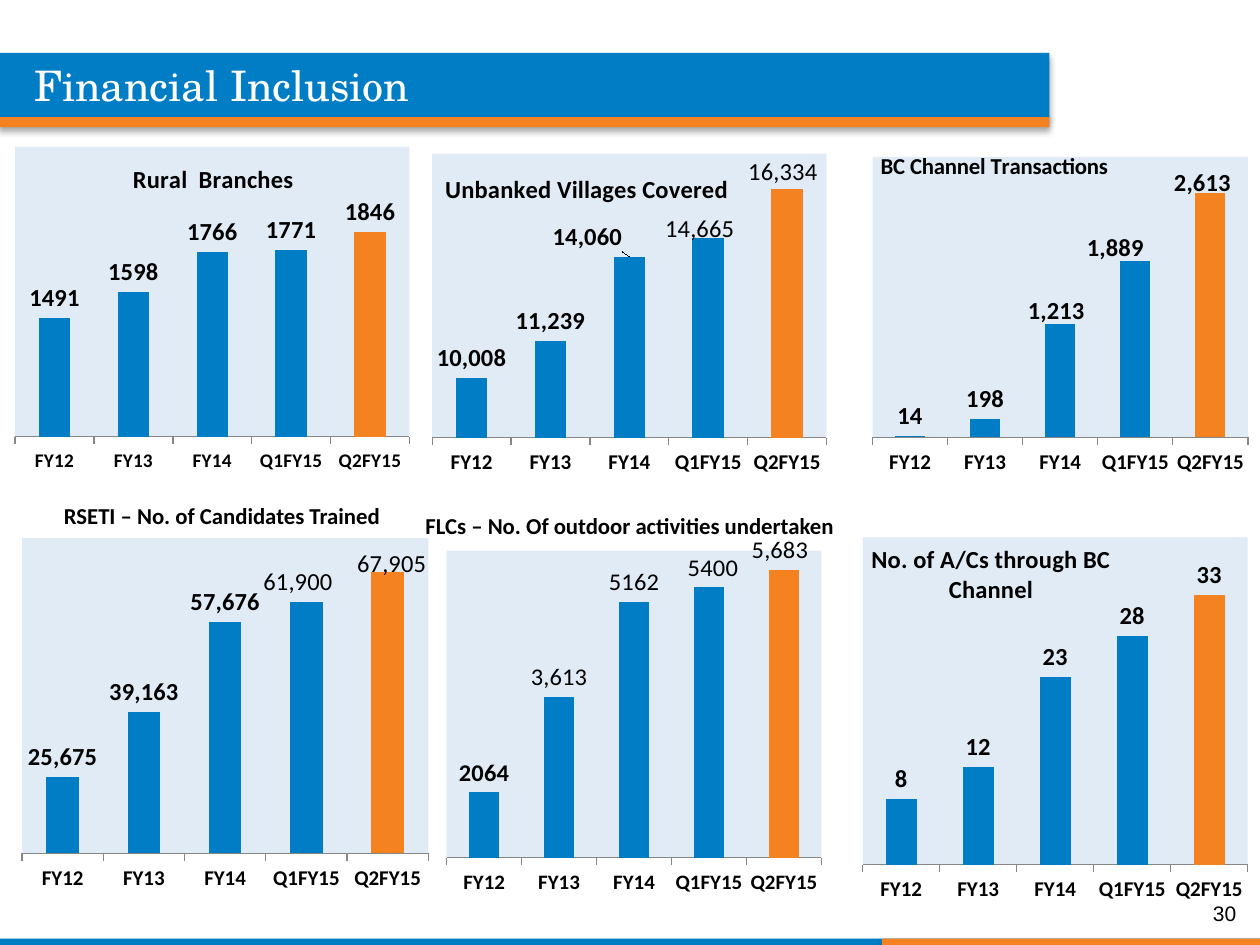
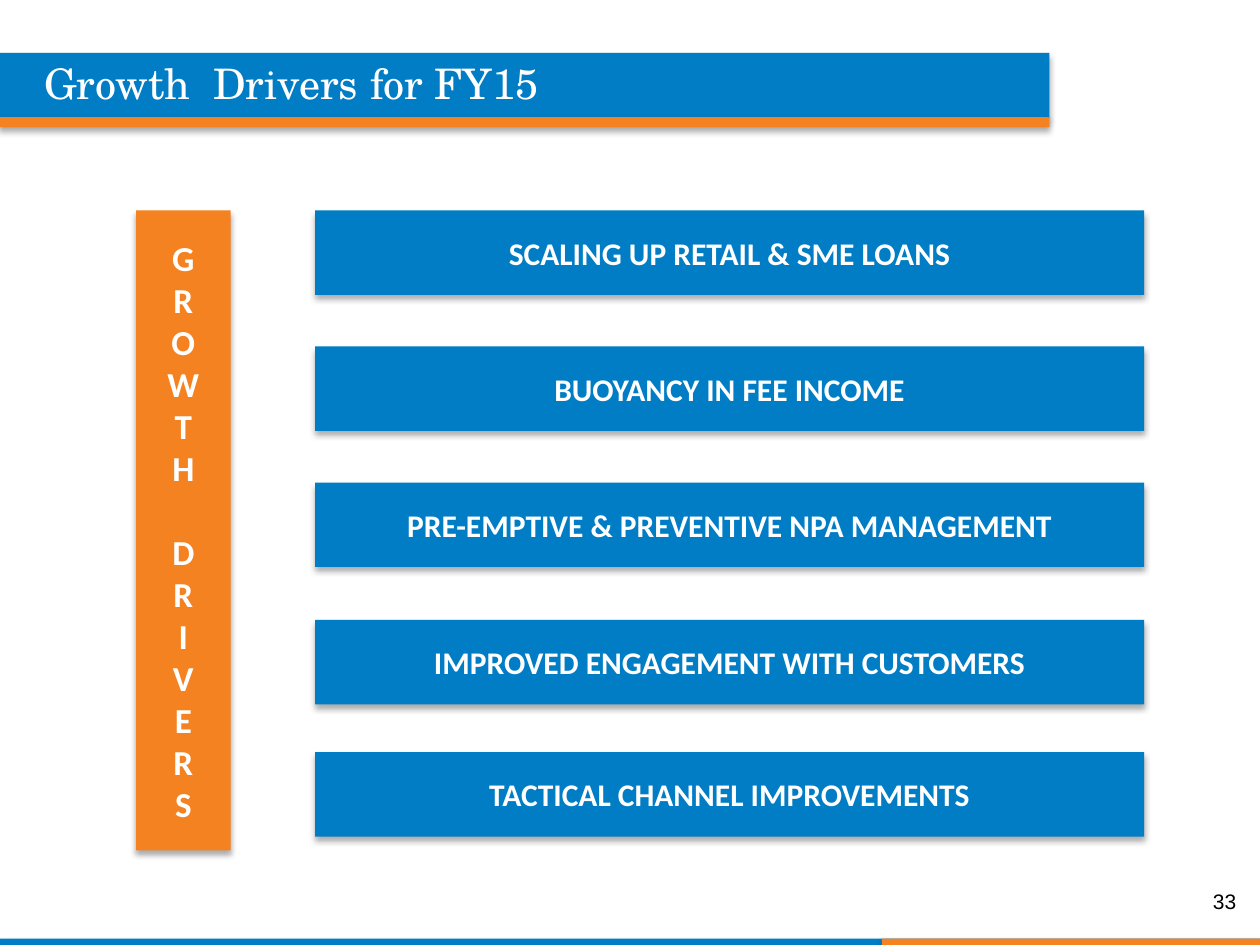
from lxml import etree
from pptx import Presentation
from pptx.chart.data import CategoryChartData
from pptx.dml.color import RGBColor
from pptx.enum.chart import XL_CHART_TYPE, XL_LABEL_POSITION, XL_TICK_MARK
from pptx.enum.shapes import MSO_SHAPE
from pptx.enum.text import MSO_ANCHOR, PP_ALIGN
from pptx.oxml import parse_xml
from pptx.oxml.ns import nsdecls, qn
from pptx.util import Inches, Pt

COLUMN = XL_CHART_TYPE.COLUMN_CLUSTERED
OUTSIDE_END = XL_LABEL_POSITION.OUTSIDE_END
TICK_OUTSIDE, TICK_NONE = XL_TICK_MARK.OUTSIDE, XL_TICK_MARK.NONE
RECTANGLE = MSO_SHAPE.RECTANGLE
TOP, MIDDLE = MSO_ANCHOR.TOP, MSO_ANCHOR.MIDDLE
LEFT, CENTER, RIGHT = PP_ALIGN.LEFT, PP_ALIGN.CENTER, PP_ALIGN.RIGHT

COLORS = {"blue": "007DC5", "orange": "F58220", "pale": "E0EBF6",
          "white": "FFFFFF", "black": "000000", "axis": "868686"}
TITLE_FONT, BODY_FONT, NUMBER_FONT = "TeX Gyre Schola", "Calibri", "Arial"
PERIODS = ["FY12", "FY13", "FY14", "Q1FY15", "Q2FY15"]
PLAIN, THOUSANDS = "0", "#,##0"

BANDS = [
    ((0, 7.45, 10, 0.05), "blue"),
    ((7, 7.45, 3, 0.05), "orange"),
    ((0, 0.42, 8.33, 0.52), "blue"),
    ((0, 0.93, 8.33, 0.08), "orange"),
]

CHARTS = [
    dict(box=(6.75, 4.17, 3.25, 3.17), values=[8, 12, 23, 28, 33],
         limits=(0, 40), plot=(0.03, 0.03, 0.94, 0.82),
         title=("No. of A/Cs through BC Channel", 14, 0.04, 0.03)),
    dict(box=(6.83, 1.08, 3.17, 2.75), values=[14, 198, 1213, 1889, 2613],
         limits=(0, 3000), plot=(0.03, 0.06, 0.94, 0.81),
         title=("BC Channel Transactions", 13, 0.04, 0.03),
         number_format=THOUSANDS,
         labels={2: (None, -0.01, 0.02), 3: (None, -0.05, 0.02),
                 4: (None, -0.02, 0.03)}),
    dict(box=(0.02, 1.08, 3.33, 2.84), values=[1491, 1598, 1766, 1771, 1846],
         limits=(1000, 2200), plot=(0.03, 0.03, 0.94, 0.81),
         title=("Rural  Branches", 14, 0.3, 0.06), axis_size=11),
    dict(box=(3.33, 1.22, 3.33, 2.75), values=[10008, 11239, 14060, 14665, 16334],
         limits=(8000, 17500), plot=(0.03, 0, 0.94, 0.82),
         title=("Unbanked Villages Covered", 14, 0.05, 0.04),
         number_format=THOUSANDS,
         labels={2: (None, -0.1, 0), 3: ("14,665", -0.02, 0.03),
                 4: ("16,334", -0.01, 0.01)}),
    dict(box=(0.17, 4.08, 3.33, 3.17), values=[25675, 39163, 57676, 61900, 67905],
         limits=(10000, 75000), plot=(0, 0.06, 0.97, 0.79),
         number_format=THOUSANDS,
         labels={3: ("61,900", -0.02, 0), 4: ("67,905", 0.01, 0.03)}),
    dict(box=(3.54, 4.25, 3.17, 3), values=[2064, 3613, 5162, 5400, 5683],
         limits=(1000, 6000), plot=(0, 0.02, 0.94, 0.83),
         labels={1: ("3,613", 0, 0), 2: ("5162", 0, 0),
                 3: ("5400", 0.01, 0), 4: ("5,683", -0.01, 0)}),
]

CHART_CAPTIONS = [
    ("FLCs – No. Of outdoor activities undertaken", (3.23, 4.01, 3.53, 0.32)),
    ("RSETI – No. of Candidates Trained", (0.39, 3.93, 2.74, 0.32)),
]

DRIVERS = [
    ("SCALING UP RETAIL & SME LOANS", 1.67),
    ("BUOYANCY IN FEE INCOME", 2.75),
    ("PRE-EMPTIVE & PREVENTIVE NPA MANAGEMENT", 3.83),
    ("IMPROVED ENGAGEMENT WITH CUSTOMERS", 4.92),
    ("TACTICAL CHANNEL IMPROVEMENTS", 5.97),
]


def color(name):
    return RGBColor.from_string(COLORS[name])


def manual_layout(x, y, size=None):
    layout = parse_xml(f"<c:layout {nsdecls('c')}><c:manualLayout/></c:layout>")
    settings = [("x", x), ("y", y)]
    if size:
        settings = [("layoutTarget", "inner"), ("xMode", "edge"), ("yMode", "edge"),
                    *settings, ("w", size[0]), ("h", size[1])]
    for tag, value in settings:
        etree.SubElement(layout[0], qn(f"c:{tag}")).set("val", str(value))
    return layout


def replace_layout(parent, layout, index):
    for old in parent.findall(qn("c:layout")):
        parent.remove(old)
    parent.insert(index, layout)


class Deck:
    def __init__(self):
        self.presentation = Presentation()
        self.presentation.slide_width = Inches(10)
        self.presentation.slide_height = Inches(7.5)
        self.layout = self.presentation.slide_layouts[5]
        self.slide = None

    def new_slide(self, title, box):
        first = self.slide is None
        self.slide = self.presentation.slides.add_slide(self.layout)
        if first:
            self.move_bands_to_layout()
        shape = self.slide.shapes.title
        shape.left, shape.top, shape.width, shape.height = map(Inches, box)
        self.set_text(shape, [title], 24, font=TITLE_FONT, ink="white",
                      align=LEFT, anchor=TOP)

    def move_bands_to_layout(self):
        tree = self.layout.shapes._spTree
        for index, (box, fill) in enumerate(BANDS):
            tree.insert(2 + index, self.bar(box, fill)._element)

    def set_text(self, shape, lines, size, font=BODY_FONT, ink="black", bold=False,
                 align=CENTER, anchor=TOP, wrap=True):
        frame = shape.text_frame
        frame.word_wrap = wrap
        frame.vertical_anchor = anchor
        for index, line in enumerate(lines):
            paragraph = frame.add_paragraph() if index else frame.paragraphs[0]
            paragraph.text = line
            paragraph.alignment = align
            paragraph.font.name = font
            paragraph.font.size = Pt(size)
            paragraph.font.bold = bold
            paragraph.font.color.rgb = color(ink)

    def text(self, content, box, size, **style):
        shape = self.slide.shapes.add_textbox(*map(Inches, box))
        self.set_text(shape, [content], size, **style)

    def page_number(self, number, top, anchor=TOP):
        self.text(number, (7.58, top, 2.33, 0.4), 12, font=NUMBER_FONT,
                  align=RIGHT, anchor=anchor)

    def bar(self, box, fill, lines=(), size=18):
        shape = self.slide.shapes.add_shape(RECTANGLE, *map(Inches, box))
        shape.fill.solid()
        shape.fill.fore_color.rgb = color(fill)
        shape.line.fill.background()
        shape.shadow.inherit = False
        effects = shape._element.spPr.find(qn("a:effectLst"))
        effects.append(parse_xml(
            f'<a:outerShdw {nsdecls("a")} blurRad="{Pt(3.5)}" dist="{Pt(2.2)}" '
            f'dir="5400000" rotWithShape="0"><a:srgbClr val="{COLORS["black"]}">'
            '<a:alpha val="32000"/></a:srgbClr></a:outerShdw>'))
        self.set_text(shape, lines, size, ink="white", bold=True, anchor=MIDDLE)
        return shape

    def chart(self, box, values, limits, plot, title=None, axis_size=12,
              number_format=PLAIN, labels=None):
        data = CategoryChartData(number_format=number_format)
        data.categories = PERIODS
        data.add_series("Series 1", values)
        chart = self.slide.shapes.add_chart(COLUMN, *map(Inches, box), data).chart
        chart.has_legend = False
        chart.font.name = BODY_FONT
        chart.font.size = Pt(18)
        chart.font.color.rgb = color("black")
        self.chart_title(chart, title)
        self.chart_axes(chart, limits, axis_size)

        bars = chart.plots[0]
        bars.gap_width = 150
        bars.vary_by_categories = False
        series = bars.series[0]
        series.format.fill.solid()
        series.format.fill.fore_color.rgb = color("blue")
        latest = series.points[len(values) - 1].format.fill
        latest.solid()
        latest.fore_color.rgb = color("orange")
        self.chart_labels(series, number_format, labels or {})

        area = chart._chartSpace.chart.plotArea
        replace_layout(area, manual_layout(*plot[:2], size=plot[2:]), 0)
        area.append(parse_xml(
            f'<c:spPr {nsdecls("c", "a")}><a:solidFill><a:srgbClr '
            f'val="{COLORS["pale"]}"/></a:solidFill></c:spPr>'))

    def chart_title(self, chart, title):
        chart.has_title = title is not None
        if not title:
            return
        content, size, x, y = title
        paragraph = chart.chart_title.text_frame.paragraphs[0]
        paragraph.text = content
        self.label_font(paragraph.font, size, True)
        layout = manual_layout(x, y)
        for index, tag in enumerate(("xMode", "yMode")):
            mode = etree.Element(qn(f"c:{tag}"), val="edge")
            layout[0].insert(index, mode)
        replace_layout(chart.chart_title._element, layout, 1)

    def chart_axes(self, chart, limits, axis_size):
        value_axis, category_axis = chart.value_axis, chart.category_axis
        value_axis.minimum_scale, value_axis.maximum_scale = limits
        value_axis.has_major_gridlines = False
        value_axis.visible = False
        category_axis.major_tick_mark = TICK_OUTSIDE
        category_axis.minor_tick_mark = TICK_NONE
        category_axis.format.line.color.rgb = color("axis")
        self.label_font(category_axis.tick_labels.font, axis_size, True)

    def chart_labels(self, series, number_format, labels):
        general = series.data_labels
        general.show_value = True
        general.number_format = number_format
        general.number_format_is_linked = False
        general.position = OUTSIDE_END
        self.label_font(general.font, 14, True)
        for index, (content, x, y) in labels.items():
            label = series.points[index].data_label
            if content:
                paragraph = label.text_frame.paragraphs[0]
                paragraph.text = content
                self.label_font(paragraph.runs[0].font, 14, False)
            else:
                self.label_font(label.font, 14, True)
            label.position = OUTSIDE_END
            element = series._element.xpath(f'.//c:dLbl[c:idx/@val="{index}"]')[0]
            replace_layout(element, manual_layout(x, y), 1)

    def label_font(self, font, size, bold):
        font.name = BODY_FONT
        font.size = Pt(size)
        font.bold = bold
        font.color.rgb = color("black")


def build_financial_inclusion(deck):
    deck.new_slide("Financial Inclusion", (0.17, 0.42, 6.75, 0.5))
    for chart in CHARTS:
        deck.chart(**chart)
    for caption, box in CHART_CAPTIONS:
        deck.text(caption, box, 13, bold=True, wrap=False)
    deck.page_number("30", 7.1)


def build_growth_drivers(deck):
    deck.new_slide("Growth  Drivers for FY15", (0.25, 0.41, 7.25, 0.5))
    spine = deck.bar((1.08, 1.67, 0.75, 5.08), "orange", "GROWTHDRIVERS", 20)
    spine.text_frame.paragraphs[len("GROWTH")].space_before = Pt(24)
    for driver, top in DRIVERS:
        deck.bar((2.5, top, 6.58, 0.67), "blue", [driver])
    deck.page_number("33", 6.95, MIDDLE)


def main():
    deck = Deck()
    build_financial_inclusion(deck)
    build_growth_drivers(deck)
    deck.presentation.save("out.pptx")


if __name__ == "__main__":
    main()
